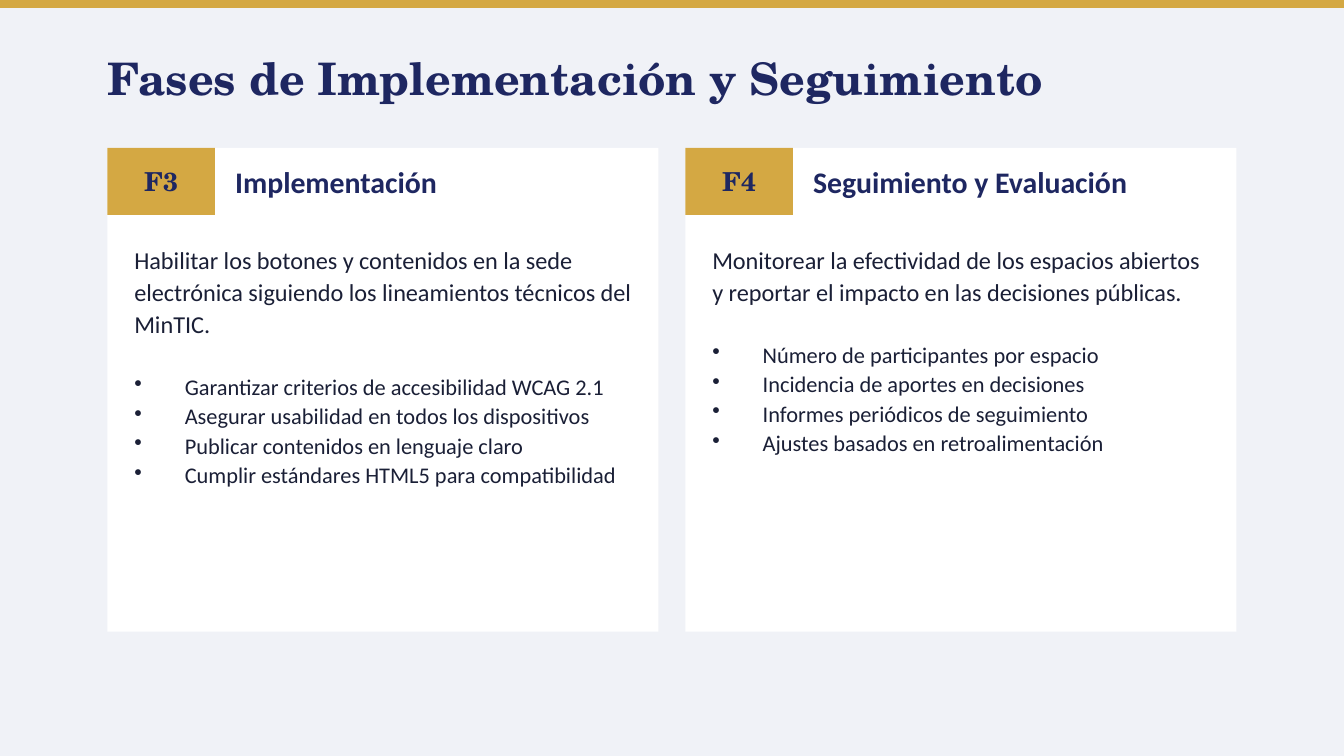
"""Build the slide on the implementation and follow-up phases."""
import lxml.etree
import pptx
import pptx.dml.color
import pptx.enum.shapes
import pptx.enum.text
import pptx.oxml.ns
import pptx.util

Pt = pptx.util.Pt
ALIGN = pptx.enum.text.PP_ALIGN
ANCHOR = pptx.enum.text.MSO_ANCHOR
COLORS = {
    "background": "F0F2F7",
    "gold": "D4A843",
    "navy": "1E2761",
    "card": "FFFFFF",
    "body": "1A1F36",
}
SERIF, SANS = "TeX Gyre Schola", "Calibri"

PHASES = [
    (
        "F3",
        "Implementación",
        "Habilitar los botones y contenidos en la sede electrónica "
        "siguiendo los lineamientos técnicos del MinTIC.",
        [
            "Garantizar criterios de accesibilidad WCAG 2.1",
            "Asegurar usabilidad en todos los dispositivos",
            "Publicar contenidos en lenguaje claro",
            "Cumplir estándares HTML5 para compatibilidad",
        ],
    ),
    (
        "F4",
        "Seguimiento y Evaluación",
        "Monitorear la efectividad de los espacios abiertos y reportar "
        "el impacto en las decisiones públicas.",
        [
            "Número de participantes por espacio",
            "Incidencia de aportes en decisiones",
            "Informes periódicos de seguimiento",
            "Ajustes basados en retroalimentación",
        ],
    ),
]

deck = pptx.Presentation()
deck.slide_width, deck.slide_height = Pt(720), Pt(405)
slide = deck.slides.add_slide(deck.slide_layouts[6])
slide.background.fill.solid()
slide.background.fill.fore_color.rgb = pptx.dml.color.RGBColor.from_string(COLORS["background"])


def add_block(left, top, width, height, color):
    block = slide.shapes.add_shape(
        pptx.enum.shapes.MSO_SHAPE.RECTANGLE, Pt(left), Pt(top), Pt(width), Pt(height)
    )
    block.shadow.inherit = False
    block.fill.solid()
    block.fill.fore_color.rgb = pptx.dml.color.RGBColor.from_string(COLORS[color])
    block.line.fill.background()


def add_text(box, lines, size, font, color, bold=True, align=ALIGN.LEFT, anchor=ANCHOR.MIDDLE):
    frame = slide.shapes.add_textbox(*[Pt(length) for length in box]).text_frame
    frame.word_wrap = True
    frame.margin_left = frame.margin_top = frame.margin_right = frame.margin_bottom = 0
    frame.vertical_anchor = anchor
    frame.text = "\n".join(lines)
    for paragraph in frame.paragraphs:
        paragraph.alignment = align
        for run in paragraph.runs:
            run.font.size, run.font.name, run.font.bold = Pt(size), font, bold
            run.font.color.rgb = pptx.dml.color.RGBColor.from_string(COLORS[color])
    return frame.paragraphs


add_block(0, 0, 720, 4.32, "gold")
add_text((57.6, 21.6, 576, 39.6), ["Fases de Implementación y Seguimiento"], 24, SERIF, "navy")

card_top, card_width, card_gap = 79.2, 295.2, 14.4
for index, (code, heading, summary, actions) in enumerate(PHASES):
    left = 57.6 + index * (card_width + card_gap)
    add_block(left, card_top, card_width, 259.2, "card")
    add_block(left, card_top, 57.6, 36, "gold")
    add_text((left, card_top, 57.6, 36), [code], 14, SERIF, "navy", align=ALIGN.CENTER)
    add_text((left + 68.4, card_top, 216, 36), [heading], 16, SANS, "navy")

    intro, *bullets = add_text(
        (left + 14.4, 129.6, 266.4, 194.4), [summary, *actions], 12, SANS, "body",
        bold=False, anchor=ANCHOR.TOP,
    )
    intro.line_spacing = 1.1
    intro.runs[0].font.size = Pt(13)
    for bullet in bullets:
        bullet.line_spacing = 1.1
        properties = bullet._p.get_or_add_pPr()
        properties.set("marL", str(Pt(27)))
        properties.set("indent", str(-Pt(27)))
        mark = lxml.etree.SubElement(properties, pptx.oxml.ns.qn("a:buChar"))
        mark.set("char", "•")
    bullets[0].space_before = Pt(17.2)

deck.save("out.pptx")
